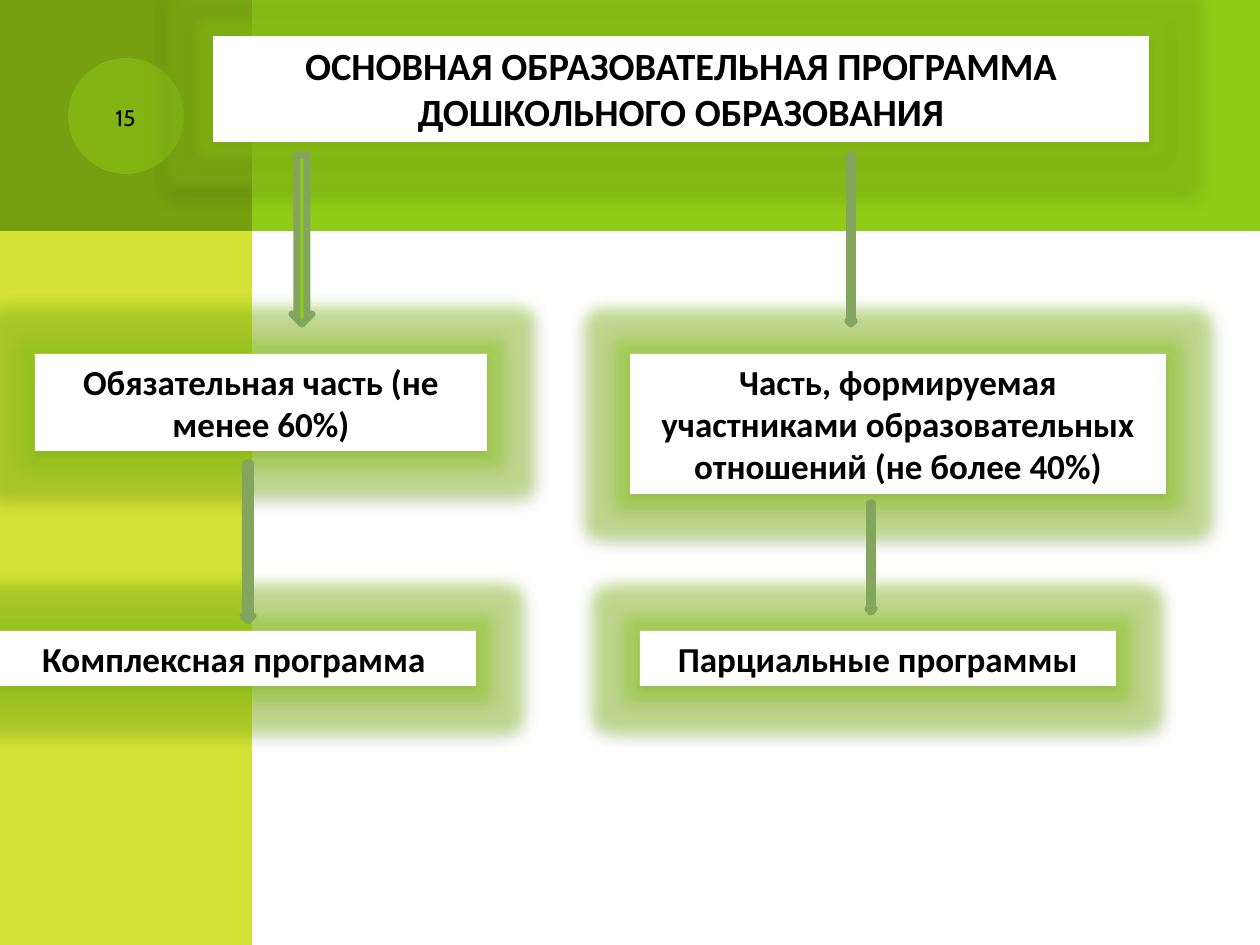
from lxml import etree
from pptx import Presentation
from pptx import util as u
from pptx.dml.color import RGBColor
from pptx.enum import shapes, text
from pptx.oxml.ns import qn

PX = u.Inches(1) / 126
LIME = RGBColor(0x8F, 0xCB, 0x17)
YELLOW = RGBColor(0xD4, 0xE3, 0x36)
OLIVE = RGBColor(0x76, 0x9F, 0x11)
SAGE = RGBColor(0x84, 0xA5, 0x5E)
WHITE = RGBColor(0xFF, 0xFF, 0xFF)
BLACK = RGBColor(0, 0, 0)
KIND = shapes.MSO_SHAPE
A = "http://schemas.openxmlformats.org/drawingml/2006/main"
GLOW = f"""<a:effectLst xmlns:a="{A}">
<a:glow rad="228600"><a:srgbClr val="{LIME}"><a:alpha val="40000"/></a:srgbClr></a:glow>
<a:outerShdw blurRad="44450" dist="27940" dir="5400000" algn="ctr" rotWithShape="0">
<a:srgbClr val="000000"><a:alpha val="32000"/></a:srgbClr></a:outerShdw>
</a:effectLst>"""

deck = Presentation()
deck.slide_width, deck.slide_height = u.Inches(10), u.Inches(7.5)
slide = deck.slides.add_slide(deck.slide_layouts[6])


def draw(kind, spot, fill):
    shape = slide.shapes.add_shape(kind, *[int(n * PX) for n in spot])
    shape.shadow.inherit = False
    shape.fill.solid()
    shape.fill.fore_color.rgb = fill
    shape.line.fill.background()
    return shape


def write(shape, words, size, face, bold):
    frame = shape.text_frame
    frame.word_wrap = True
    frame.text = words
    line = frame.paragraphs[0]
    line.alignment = text.PP_ALIGN.CENTER
    font = line.runs[0].font
    font.size, font.name, font.bold = u.Pt(size), face, bold
    font.color.rgb = BLACK
    return frame


draw(KIND.RECTANGLE, (63, 0, 1197, 231), LIME)
draw(KIND.RECTANGLE, (0, 0, 252, 945), YELLOW)
draw(KIND.RECTANGLE, (0, 0, 252, 231), OLIVE)
disc = draw(KIND.OVAL, (68, 58, 116, 116), LIME)
tint = disc.fill.fore_color._xFill.find(qn("a:srgbClr"))
etree.SubElement(tint, qn("a:alpha"), val="50000")

label = slide.shapes.add_textbox(*[int(n * PX) for n in (73, 73, 105, 84)])
frame = write(label, "15", 16, "Cabin", False)
frame.vertical_anchor = text.MSO_ANCHOR.MIDDLE
frame.paragraphs[0].runs[0].font._element.set("cap", "small")

boxes = [
    ((35, 354, 452, 97), "Обязательная часть (не менее 60%)", 20),
    ((630, 354, 536, 140),
     "Часть, формируемая участниками образовательных отношений (не более 40%)", 20),
    ((213, 36, 936, 106),
     "ОСНОВНАЯ ОБРАЗОВАТЕЛЬНАЯ ПРОГРАММА ДОШКОЛЬНОГО ОБРАЗОВАНИЯ", 22),
    ((0, 631, 476, 55), "Комплексная программа ", 20),
    ((640, 631, 476, 55), "Парциальные программы", 20),
]
for spot, words, size in boxes:
    box = draw(KIND.RECTANGLE, spot, WHITE)
    props = box._element.spPr
    props.replace(props.find(qn("a:effectLst")), etree.fromstring(GLOW))
    frame = write(box, words, size, "Calibri", True)
    frame.vertical_anchor = text.MSO_ANCHOR.TOP
    frame.auto_size = text.MSO_AUTO_SIZE.SHAPE_TO_FIT_TEXT

arrows = [(292, 155, 20, 169), (848, 155, 6, 169), (243, 463, 10, 158), (868, 503, 6, 109)]
for spot in arrows:
    arrow = draw(KIND.DOWN_ARROW, spot, LIME)
    arrow.line.color.rgb = SAGE
    arrow.line.width = u.Pt(4)

deck.save("out.pptx")
